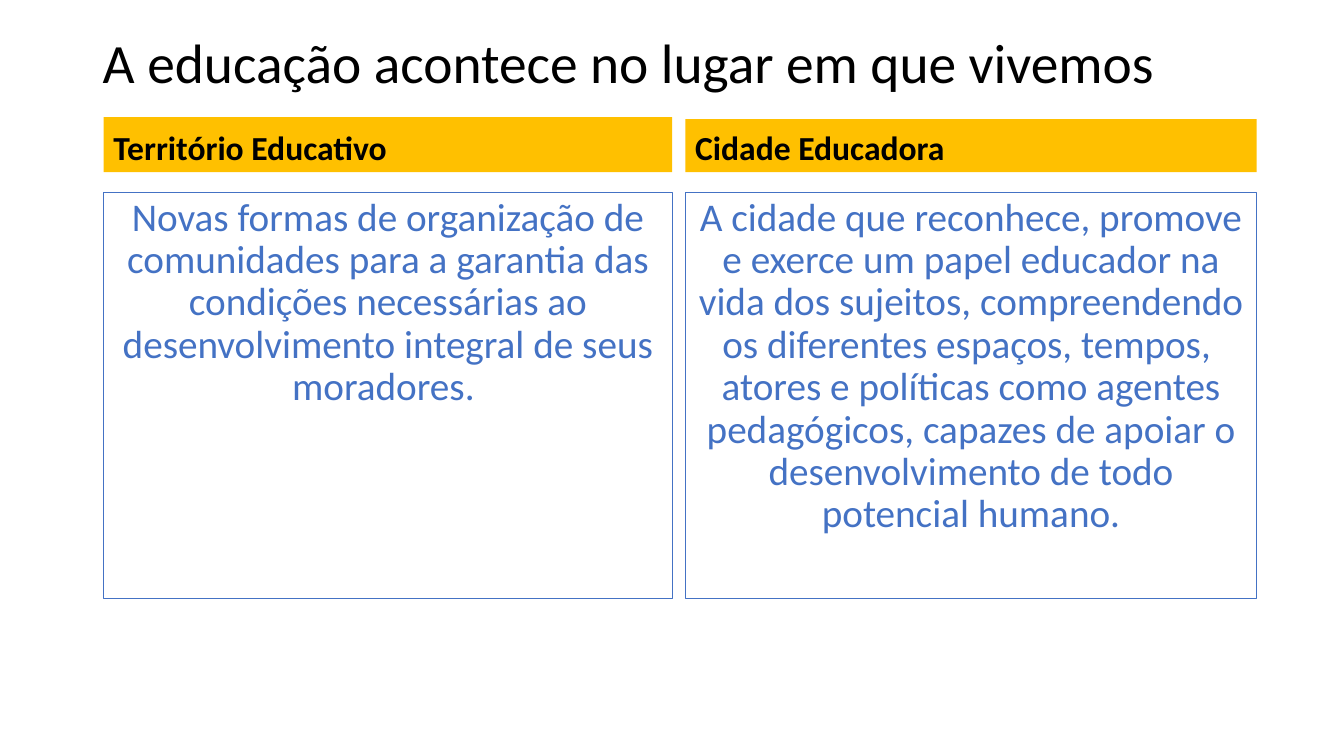
from dataclasses import dataclass

from pptx import Presentation
from pptx.dml.color import RGBColor
from pptx.enum.shapes import MSO_SHAPE
from pptx.enum.text import MSO_ANCHOR, PP_ALIGN
from pptx.util import Cm, Pt


@dataclass(frozen=True)
class Theme:
    font: str = "Calibri"
    black: RGBColor = RGBColor(0x00, 0x00, 0x00)
    amber: RGBColor = RGBColor(0xFF, 0xC0, 0x00)
    blue: RGBColor = RGBColor(0x44, 0x72, 0xC4)
    title_size: float = 39.6
    heading_size: float = 24
    body_size: float = 28
    border: float = 0.75


class SlideBuilder:
    def __init__(self, slide, theme):
        self.slide = slide
        self.theme = theme

    def set_text(self, shape, text, *, size, color, bold=False,
                 align=PP_ALIGN.LEFT, anchor=MSO_ANCHOR.TOP):
        frame = shape.text_frame
        frame.word_wrap = True
        frame.vertical_anchor = anchor
        paragraph = frame.paragraphs[0]
        paragraph.alignment = align
        paragraph.line_spacing = 0.9
        run = paragraph.add_run()
        run.text = text
        run.font.name = self.theme.font
        run.font.size = Pt(size)
        run.font.bold = bold
        run.font.color.rgb = color

    def title(self, text, left, top, width, height):
        box = self.slide.shapes.add_textbox(Cm(left), Cm(top), Cm(width), Cm(height))
        self.set_text(box, text, size=self.theme.title_size, color=self.theme.black,
                      anchor=MSO_ANCHOR.MIDDLE)

    def rectangle(self, left, top, width, height):
        shape = self.slide.shapes.add_shape(
            MSO_SHAPE.RECTANGLE, Cm(left), Cm(top), Cm(width), Cm(height))
        shape.shadow.inherit = False
        return shape

    def heading(self, text, left, top, width, height):
        shape = self.rectangle(left, top, width, height)
        shape.fill.solid()
        shape.fill.fore_color.rgb = self.theme.amber
        shape.line.fill.background()
        self.set_text(shape, text, size=self.theme.heading_size, color=self.theme.black,
                      bold=True, anchor=MSO_ANCHOR.BOTTOM)

    def panel(self, text, left, top, width, height):
        shape = self.rectangle(left, top, width, height)
        shape.fill.background()
        shape.line.color.rgb = self.theme.blue
        shape.line.width = Pt(self.theme.border)
        self.set_text(shape, text, size=self.theme.body_size, color=self.theme.blue,
                      align=PP_ALIGN.CENTER)


HEADING_BOTTOM = 4.34
PANEL_TOP, PANEL_HEIGHT = 4.85, 10.24

# Left, width, heading top, heading, definition
COLUMNS = [
    (2.61, 14.33, 2.95, "Território Educativo",
     "Novas formas de organização de comunidades para a garantia das condições "
     "necessárias ao desenvolvimento integral de seus moradores. "),
    (17.27, 14.4, 3.0, "Cidade Educadora",
     "A cidade que reconhece, promove e exerce um papel educador na vida dos "
     "sujeitos, compreendendo os diferentes espaços, tempos,  atores e políticas "
     "como agentes pedagógicos, capazes de apoiar o desenvolvimento de todo "
     "potencial humano."),
]


def main():
    presentation = Presentation()
    presentation.slide_width = Cm(33.87)
    presentation.slide_height = Cm(19.05)
    slide = presentation.slides.add_slide(presentation.slide_layouts[6])
    builder = SlideBuilder(slide, Theme())

    # Title
    builder.title("A educação acontece no lugar em que vivemos", 2.34, 1.02, 29.21, 1.24)

    # Two columns: heading above its definition
    for left, width, top, heading, definition in COLUMNS:
        builder.heading(heading, left, top, width, HEADING_BOTTOM - top)
        builder.panel(definition, left, PANEL_TOP, width, PANEL_HEIGHT)

    presentation.save("out.pptx")


if __name__ == "__main__":
    main()
